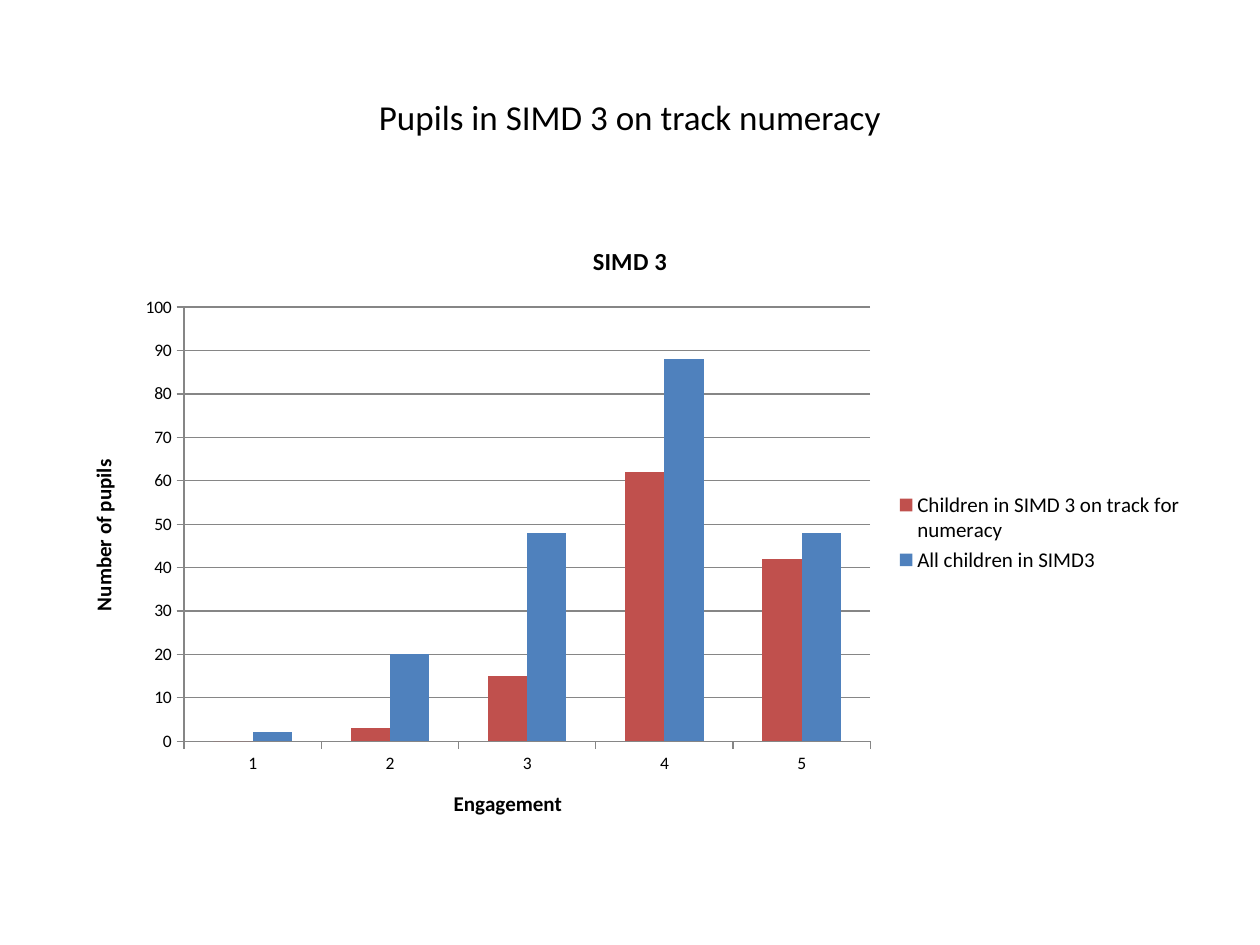
from pptx import Presentation
from pptx.chart.data import CategoryChartData
from pptx.dml.color import RGBColor
from pptx.enum.chart import XL_CHART_TYPE, XL_LEGEND_POSITION, XL_TICK_MARK
from pptx.enum.text import MSO_ANCHOR, PP_ALIGN
from pptx.util import Cm, Pt

BLACK = RGBColor(0x00, 0x00, 0x00)
GREY = RGBColor(0x86, 0x86, 0x86)
RED = RGBColor(0xC0, 0x50, 0x4D)
BLUE = RGBColor(0x4F, 0x81, 0xBD)

SERIES = [
    ("Children in SIMD 3 on track for numeracy", (0, 3, 15, 62, 42), RED),
    ("All children in SIMD3", (2, 20, 48, 88, 48), BLUE),
]


def format_font(font, size, bold=False):
    font.color.rgb = BLACK
    values = {"name": "Calibri", "size": Pt(size), "bold": bold}
    for name, value in values.items():
        setattr(font, name, value)


def add_heading(owner, text, size):
    """Give a chart or an axis a bold title."""
    owner.has_title = True
    frame = owner.chart_title.text_frame if hasattr(owner, "chart_title") else owner.axis_title.text_frame
    frame.text = text
    format_font(frame.paragraphs[0].runs[0].font, size, bold=True)


presentation = Presentation()
presentation.slide_width = Cm(25.4)
presentation.slide_height = Cm(19.05)
slide = presentation.slides.add_slide(presentation.slide_layouts[5])

# Slide title
title = slide.shapes.title
place = {"left": Cm(1.27), "top": Cm(0.76), "width": Cm(22.86), "height": Cm(3.18)}
for name, value in place.items():
    setattr(title, name, value)
title.text_frame.text = "Pupils in SIMD 3 on track numeracy"
title.text_frame.vertical_anchor = MSO_ANCHOR.MIDDLE
paragraph = title.text_frame.paragraphs[0]
paragraph.alignment = PP_ALIGN.CENTER
format_font(paragraph.runs[0].font, 20)

# Column chart
chart_data = CategoryChartData()
chart_data.categories = ["1", "2", "3", "4", "5"]
for name, values, color in SERIES:
    chart_data.add_series(name, values)
chart = slide.shapes.add_chart(
    XL_CHART_TYPE.COLUMN_CLUSTERED, Cm(1.27), Cm(4.45), Cm(22.86), Cm(12.57), chart_data
).chart
format_font(chart.font, 10)
add_heading(chart, "SIMD 3", 14)

plot = chart.plots[0]
plot.gap_width = 150
plot.overlap = 0
plot.vary_by_categories = False
for series, (name, values, color) in zip(plot.series, SERIES):
    series.format.fill.solid()
    series.format.fill.fore_color.rgb = color

# Axes
for axis, text in (
    (chart.category_axis, "Engagement"),
    (chart.value_axis, "Number of pupils"),
):
    add_heading(axis, text, 12)
    axis.major_tick_mark = XL_TICK_MARK.OUTSIDE
    axis.minor_tick_mark = XL_TICK_MARK.NONE
    axis.format.line.color.rgb = GREY

value_axis = chart.value_axis
scale = {"minimum_scale": 0, "maximum_scale": 100, "major_unit": 10, "has_major_gridlines": True}
for name, value in scale.items():
    setattr(value_axis, name, value)
value_axis.major_gridlines.format.line.color.rgb = GREY

# Legend
chart.has_legend = True
chart.legend.position = XL_LEGEND_POSITION.RIGHT
chart.legend.include_in_layout = False
format_font(chart.legend.font, 12)

presentation.save("out.pptx")
